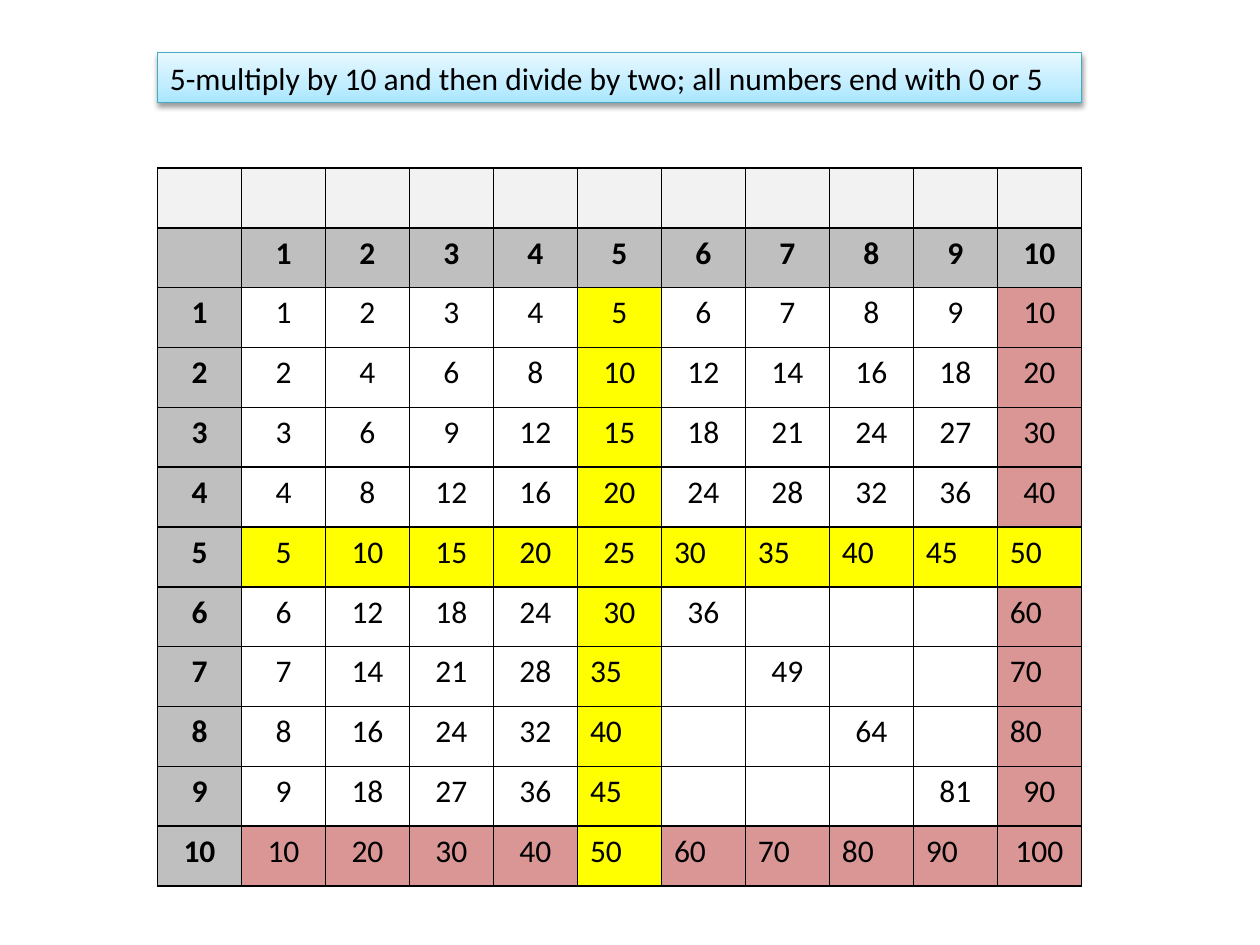
from dataclasses import dataclass

from lxml.etree import SubElement
from pptx import Presentation
from pptx.dml.color import RGBColor
from pptx.enum.shapes import MSO_SHAPE
from pptx.enum.text import MSO_ANCHOR, MSO_AUTO_SIZE, PP_ALIGN
from pptx.oxml.ns import qn
from pptx.util import Emu, Pt

PX_PER_INCH = 120
EMU_PER_PX = 914400 // PX_PER_INCH
FACTORS = range(1, 11)
LEFT_ALIGNED = (
    {(5, column) for column in range(6, 11)}
    | {(row, 5) for row in range(7, 11)}
    | {(row, 10) for row in range(6, 9)}
    | {(10, column) for column in range(6, 10)}
)


@dataclass(frozen=True)
class Entry:
    row: int
    column: int
    wording: str
    fill: str
    bold: bool = False
    align: PP_ALIGN = PP_ALIGN.CENTER


def px(length: int) -> Emu:
    return Emu(length * EMU_PER_PX)


def color(value: str) -> RGBColor:
    return RGBColor.from_string(value)


def write(frame, wording: str, *, bold=False, align=PP_ALIGN.LEFT, size=18) -> None:
    paragraph = frame.paragraphs[0]
    paragraph.alignment = align
    run = paragraph.add_run()
    run.text = wording
    run.font.name = "Calibri"
    run.font.size = Pt(size)
    run.font.bold = bold
    run.font.color.rgb = color("000000")


def add_color(parent, value: str):
    return SubElement(parent, qn("a:srgbClr"), val=value)


def draw_borders(cell, value: str, points: int) -> None:
    properties = cell._tc.get_or_add_tcPr()
    for position, side in enumerate(("lnL", "lnR", "lnT", "lnB")):
        border = SubElement(properties, qn(f"a:{side}"), w=str(Pt(points)))
        add_color(SubElement(border, qn("a:solidFill")), value)
        properties.insert(position, border)


def draw_entry(grid, entry: Entry) -> None:
    cell = grid.cell(entry.row, entry.column)
    cell.fill.solid()
    cell.fill.fore_color.rgb = color(entry.fill)
    draw_borders(cell, "000000", 1)
    if entry.wording:
        write(cell.text_frame, entry.wording, bold=entry.bold, align=entry.align)


def product_entry(row: int, column: int) -> Entry:
    pair = (row, column)
    fill = "FFFF00" if 5 in pair else "D99694" if 10 in pair else "FFFFFF"
    unknown = row != column and all(6 <= factor <= 9 for factor in pair)
    align = PP_ALIGN.LEFT if pair in LEFT_ALIGNED else PP_ALIGN.CENTER
    wording = "" if unknown else str(row * column)
    return Entry(row + 1, column, wording, fill, align=align)


def table_entries() -> list[Entry]:
    blanks = [Entry(0, column, "", "F2F2F2") for column in range(11)]
    corner = [Entry(1, 0, "", "BFBFBF")]
    across = [Entry(1, n, str(n), "BFBFBF", bold=True) for n in FACTORS]
    down = [Entry(n + 1, 0, str(n), "BFBFBF", bold=True) for n in FACTORS]
    products = [product_entry(row, column) for row in FACTORS for column in FACTORS]
    return blanks + corner + across + down + products


def draw_times_table(slide) -> None:
    grid = slide.shapes.add_table(12, 11, px(150), px(160), px(880), px(684)).table
    grid.first_row = False
    grid.horz_banding = False
    for column in grid.columns:
        column.width = px(80)
    for row in grid.rows:
        row.height = px(57)
    for entry in table_entries():
        draw_entry(grid, entry)


def draw_rule(slide, wording: str) -> None:
    banner = slide.shapes.add_shape(
        MSO_SHAPE.RECTANGLE, px(150), px(50), px(880), px(48)
    )
    banner.line.color.rgb = color("46AAC5")
    banner.line.width = Pt(0.75)

    banner.fill.gradient()
    banner.fill.gradient_angle = 90
    stops = banner._element.spPr.find(qn("a:gradFill")).find(qn("a:gsLst"))
    stops.clear()
    for percent, value in ((0, "A7E6FF"), (35, "C1EDFF"), (100, "E7F8FF")):
        add_color(SubElement(stops, qn("a:gs"), pos=str(percent * 1000)), value)

    banner.shadow.inherit = False
    shadow = SubElement(
        banner._element.spPr.find(qn("a:effectLst")), qn("a:outerShdw"),
        blurRad=str(Pt(3.1)), dist=str(Pt(1.6)), dir="5400000", rotWithShape="0",
    )
    SubElement(add_color(shadow, "000000"), qn("a:alpha"), val="38000")

    frame = banner.text_frame
    frame.word_wrap = True
    frame.auto_size = MSO_AUTO_SIZE.SHAPE_TO_FIT_TEXT
    frame.vertical_anchor = MSO_ANCHOR.TOP
    write(frame, wording)


def main() -> None:
    deck = Presentation()
    deck.slide_width = px(1200)
    deck.slide_height = px(900)
    slide = deck.slides.add_slide(deck.slide_layouts[6])
    draw_times_table(slide)
    draw_rule(
        slide, "5-multiply by 10 and then divide by two; all numbers end with 0 or 5"
    )
    deck.save("out.pptx")


if __name__ == "__main__":
    main()
